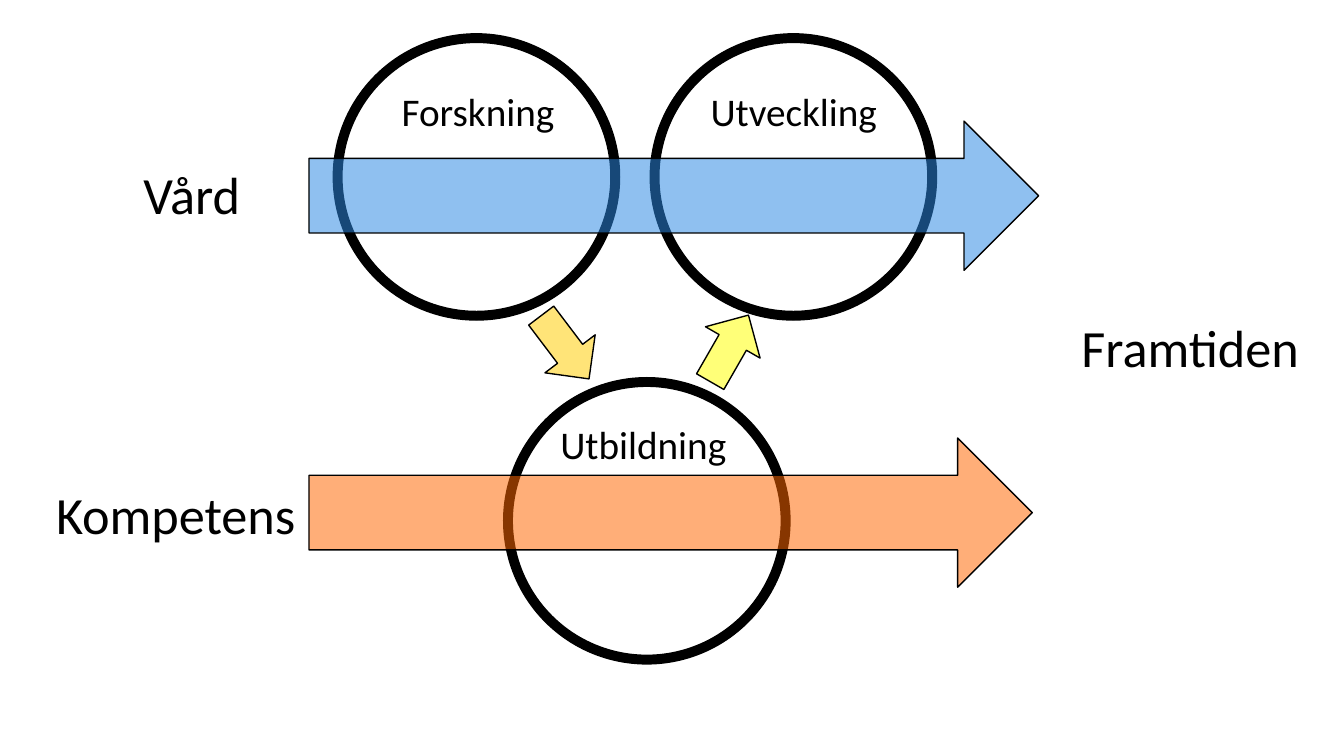
from lxml.etree import SubElement
from pptx import Presentation
from pptx.dml.color import RGBColor
from pptx.enum.shapes import MSO_SHAPE
from pptx.enum.text import MSO_AUTO_SIZE
from pptx.oxml.ns import qn
from pptx.util import Cm, Pt

BLACK = RGBColor(0x00, 0x00, 0x00)
BLUE = RGBColor(0x2C, 0x89, 0xE3)
GOLD = RGBColor(0xFF, 0xCC, 0x00)
YELLOW = RGBColor(0xFF, 0xFF, 0x00)
ORANGE = RGBColor(0xFF, 0x66, 0x00)
FONT = "Calibri"
RING = 5.41
ALPHA = 53


def add_shape(slide, kind, box, color):
    shape = slide.shapes.add_shape(kind, *map(Cm, box))
    shape.shadow.inherit = False
    shape.fill.solid()
    shape.fill.fore_color.rgb = color
    shape.line.color.rgb = BLACK
    shape.line.width = Pt(0.75)
    return shape


def add_ring(slide, left, top):
    ring = add_shape(slide, MSO_SHAPE.DONUT, (left, top, RING, RING), BLACK)
    ring.adjustments[0] = 0.03


def add_arrow(slide, box, color, turn=0):
    arrow = add_shape(slide, MSO_SHAPE.RIGHT_ARROW, box, color)
    arrow.rotation = turn
    tint = arrow.fill._xPr.find(qn("a:solidFill"))[0]
    SubElement(tint, qn("a:alpha"), val=str(ALPHA * 1000))


def add_label(slide, text, box, size):
    frame = slide.shapes.add_textbox(*map(Cm, box)).text_frame
    frame.word_wrap = False
    frame.auto_size = MSO_AUTO_SIZE.SHAPE_TO_FIT_TEXT
    line = frame.paragraphs[0]
    line.text = text
    line.font.name = FONT
    line.font.size = Pt(size)
    line.font.color.rgb = BLACK


def main():
    deck = Presentation()
    deck.slide_width, deck.slide_height = Cm(25.4), Cm(14.29)
    slide = deck.slides.add_slide(deck.slide_layouts[6])

    for left, top in ((9.52, 7.14), (6.3, 0.64), (12.29, 0.64)):
        add_ring(slide, left, top)

    for text, left, top, width in (
        ("Forskning", 7.34, 1.52, 3.43),
        ("Utbildning", 10.34, 7.82, 3.68),
        ("Utveckling", 13.18, 1.52, 3.68),
    ):
        add_label(slide, text, (left, top, width, 1.14), 21)

    add_arrow(slide, (5.84, 2.29, 13.79, 2.82), BLUE)
    add_arrow(slide, (9.93, 5.97, 1.5, 1.19), GOLD, 52.9)
    add_arrow(slide, (13.06, 5.99, 1.45, 1.19), YELLOW, 299.9)
    add_arrow(slide, (5.84, 8.28, 13.67, 2.82), ORANGE)

    for text, left, top, width in (
        ("Vård", 2.46, 2.95, 2.36),
        ("Kompetens", 0.81, 8.99, 5.08),
        ("Framtiden", 20.19, 5.84, 4.67),
    ):
        add_label(slide, text, (left, top, width, 1.45), 28)

    deck.save("out.pptx")


if __name__ == "__main__":
    main()
